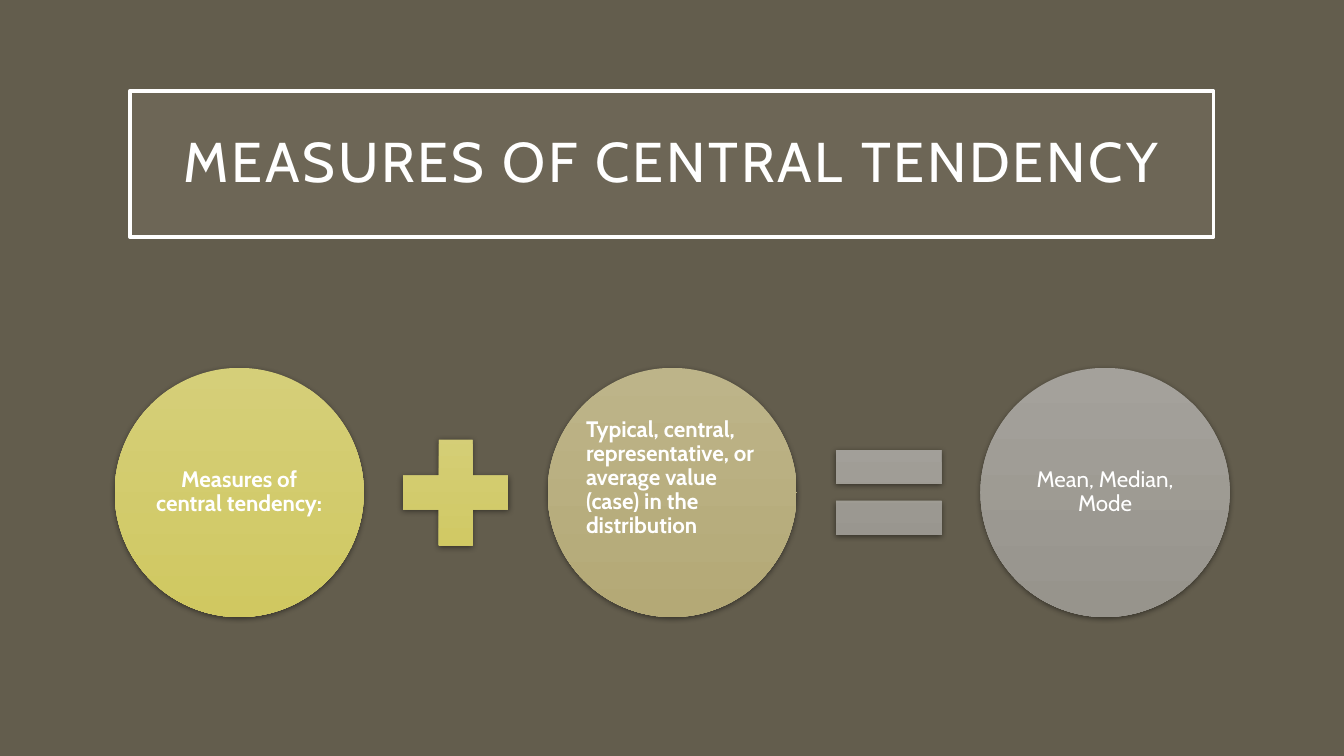
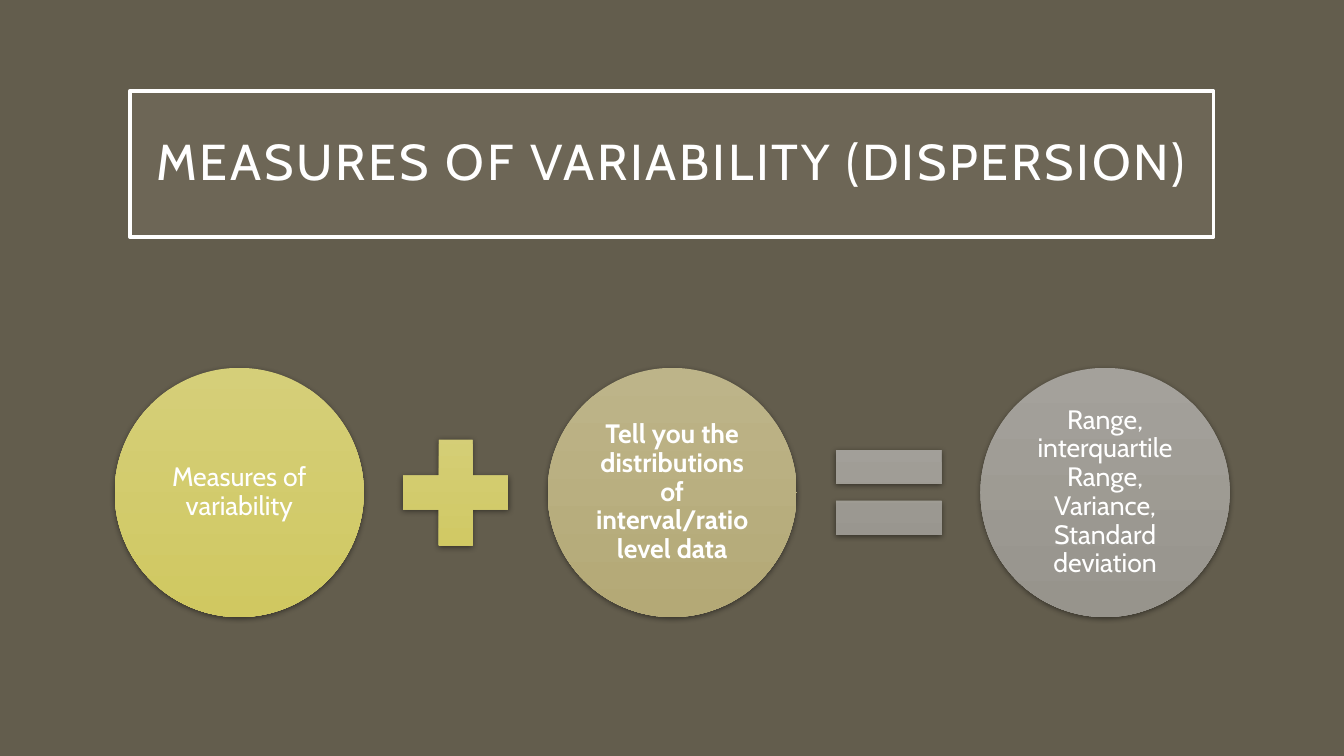
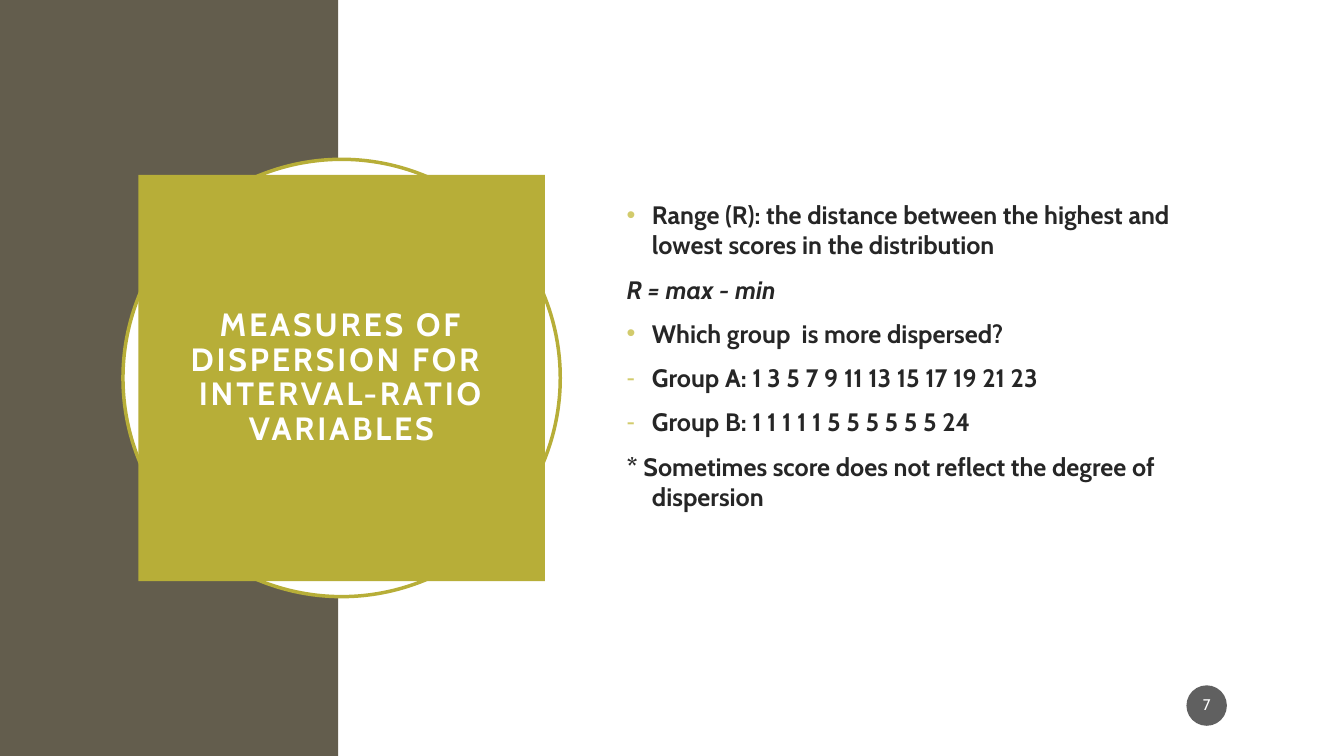
from dataclasses import dataclass

from lxml.etree import SubElement
from pptx import Presentation
from pptx.dml.color import RGBColor
from pptx.enum.shapes import MSO_SHAPE
from pptx.enum.text import MSO_ANCHOR, MSO_AUTO_SIZE, PP_ALIGN
from pptx.oxml.ns import qn
from pptx.presentation import Presentation as Deck
from pptx.shapes.autoshape import Shape
from pptx.slide import Slide
from pptx.text.text import TextFrame, _Paragraph
from pptx.util import Cm, Pt

FONT = "Cabin"
COLORS = {
    "earth": "635D4D",
    "sand": "A7A08E",
    "olive": "B7AE38",
    "bullet": "D2CB6C",
    "ink": "262626",
    "badge": "1D1D1D",
    "white": "FFFFFF",
    "black": "000000",
}
GRADIENTS = {
    "yellow": ("D5CF79", "D0C861"),
    "khaki": ("BDB489", "B4A976"),
    "gray": ("A4A19B", "97948C"),
}

SLIDE_W, SLIDE_H = 33.87, 19.05
TITLE_ONLY, TITLE_AND_BODY = 5, 1

# Equation row, in centimetres
CIRCLE, SIGN, GAP = 6.28, 3.63, 0.5
ROW_LEFT, ROW_MIDDLE = 2.89, 12.41
SIGNS = (MSO_SHAPE.MATH_PLUS, MSO_SHAPE.MATH_EQUAL)
SIGN_GRADIENTS = ("yellow", "gray")


@dataclass(frozen=True)
class Box:
    left: float
    top: float
    width: float
    height: float

    def lengths(self) -> tuple[Cm, Cm, Cm, Cm]:
        return Cm(self.left), Cm(self.top), Cm(self.width), Cm(self.height)


@dataclass(frozen=True)
class Term:
    text: str
    gradient: str
    bold: bool = False
    align: PP_ALIGN = PP_ALIGN.CENTER
    lift: float = 0.0


@dataclass(frozen=True)
class Equation:
    title: str
    title_size: int
    term_size: int
    inset: float
    terms: tuple[Term, Term, Term]


@dataclass(frozen=True)
class Point:
    text: str
    bullet: str = ""
    italic: bool = False


EQUATIONS = (
    Equation("MEASURES OF CENTRAL TENDENCY", 40, 16, 0.05, (
        Term("Measures of central tendency:", "yellow", bold=True),
        Term("Typical, central, representative, or average value (case) in the distribution",
             "khaki", bold=True, align=PP_ALIGN.LEFT, lift=0.36),
        Term("Mean, Median, Mode", "gray"),
    )),
    Equation("MEASURES OF VARIABILITY (DISPERSION)", 36, 19, 0.08, (
        Term("Measures of variability", "yellow"),
        Term("Tell you the distributions of interval/ratio level data", "khaki", bold=True),
        Term("Range, interquartile Range, Variance, Standard deviation", "gray"),
    )),
)
DISPERSION_TITLE = "MEASURES OF DISPERSION FOR \vINTERVAL-RATIO VARIABLES"
DISPERSION_POINTS = (
    Point("Range (R): the distance between the highest and lowest scores in the distribution", "•"),
    Point("R = max - min", italic=True),
    Point("Which group  is more dispersed?", "•"),
    Point("Group A: 1 3 5 7 9 11 13 15 17 19 21 23", "-"),
    Point("Group B: 1 1 1 1 1 5 5 5 5 5 5 24", "-"),
    Point("* Sometimes score does not reflect the degree of dispersion"),
)


def rgb(name: str) -> RGBColor:
    return RGBColor.from_string(COLORS[name])


def fill_solid(shape: Shape, color: str, opacity: int = 100) -> None:
    shape.fill.solid()
    shape.fill.fore_color.rgb = rgb(color)
    if opacity < 100:
        fill_color = shape._element.spPr.find(qn("a:solidFill")).find(qn("a:srgbClr"))
        SubElement(fill_color, qn("a:alpha"), val=str(opacity * 1000))


def fill_gradient(shape: Shape, gradient: str) -> None:
    shape.fill.gradient()
    shape.fill.gradient_angle = 270
    for stop, color in zip(shape.fill.gradient_stops, GRADIENTS[gradient]):
        stop.color.rgb = RGBColor.from_string(color)


def outline(shape: Shape, color: str) -> None:
    shape.line.color.rgb = rgb(color)
    shape.line.width = Pt(2.5)


def add_soft_shadow(shape: Shape) -> None:
    effects = shape._element.spPr.find(qn("a:effectLst"))
    shadow = SubElement(effects, qn("a:outerShdw"), blurRad=str(Pt(4.4)), dist=str(Pt(1.2)),
                        dir="5400000", algn="ctr", rotWithShape="0")
    color = SubElement(shadow, qn("a:srgbClr"), val=COLORS["black"])
    SubElement(color, qn("a:alpha"), val="45000")


def add_plain_shape(slide: Slide, kind: MSO_SHAPE, box: Box) -> Shape:
    """Add a preset shape without line or shadow."""
    shape = slide.shapes.add_shape(kind, *box.lengths())
    shape.shadow.inherit = False
    shape.line.fill.background()
    return shape


def set_frame(frame: TextFrame, inset_x: float, inset_y: float, lift: float = 0) -> None:
    """Centre the text vertically, raised by lift centimetres."""
    frame.word_wrap = True
    frame.auto_size = MSO_AUTO_SIZE.NONE
    frame.vertical_anchor = MSO_ANCHOR.MIDDLE
    frame.margin_left = frame.margin_right = Cm(inset_x)
    frame.margin_top = Cm(inset_y)
    frame.margin_bottom = Cm(inset_y + 2 * lift)


def set_font(paragraph: _Paragraph, size: int, color: str = "white", bold: bool = False) -> None:
    font = paragraph.font
    font.name, font.size, font.bold = FONT, Pt(size), bold
    font.color.rgb = rgb(color)


def write_line(frame: TextFrame, text: str, size: int, bold: bool = False,
               align: PP_ALIGN = PP_ALIGN.CENTER) -> _Paragraph:
    frame.text = text
    paragraph = frame.paragraphs[0]
    paragraph.alignment = align
    paragraph.line_spacing = 0.9
    set_font(paragraph, size, bold=bold)
    return paragraph


def place(shape: Shape, box: Box) -> None:
    shape.left, shape.top, shape.width, shape.height = box.lengths()


def set_title(slide: Slide, text: str, box: Box, size: int, bold: bool = False) -> Shape:
    """Fill the title placeholder and bring it to the front."""
    title = slide.shapes.title
    place(title, box)
    set_frame(title.text_frame, 0.51, 0.51)
    paragraph = write_line(title.text_frame, text, size, bold)
    paragraph.font._rPr.set("spc", "200")
    slide.shapes._spTree.append(title._element)
    return title


def add_slide(deck: Deck, layout: int, background: str) -> Slide:
    slide = deck.slides.add_slide(deck.slide_layouts[layout])
    slide.background.fill.solid()
    slide.background.fill.fore_color.rgb = rgb(background)
    return slide


def add_equation_slide(deck: Deck, equation: Equation) -> None:
    slide = add_slide(deck, TITLE_ONLY, "earth")
    title = set_title(slide, equation.title, Box(3.27, 2.29, 27.31, 3.68), equation.title_size)
    fill_solid(title, "sand", opacity=15)
    outline(title, "white")

    pitch = CIRCLE + SIGN + 2 * GAP
    for index, term in enumerate(equation.terms):
        left = ROW_LEFT + index * pitch
        circle = add_plain_shape(slide, MSO_SHAPE.OVAL,
                                 Box(left, ROW_MIDDLE - CIRCLE / 2, CIRCLE, CIRCLE))
        fill_gradient(circle, term.gradient)
        add_soft_shadow(circle)
        set_frame(circle.text_frame, equation.inset, equation.inset, term.lift)
        write_line(circle.text_frame, term.text, equation.term_size, term.bold, term.align)

    for index, (kind, gradient) in enumerate(zip(SIGNS, SIGN_GRADIENTS)):
        left = ROW_LEFT + index * pitch + CIRCLE + GAP
        sign = add_plain_shape(slide, kind, Box(left, ROW_MIDDLE - SIGN / 2, SIGN, SIGN))
        fill_gradient(sign, gradient)
        add_soft_shadow(sign)


def write_point(paragraph: _Paragraph, point: Point) -> None:
    paragraph.text = point.text
    paragraph.space_before = Pt(10)
    properties = paragraph._p.get_or_add_pPr()
    properties.set("marL", str(Cm(0.64)))
    properties.set("indent", str(-Cm(0.64)))
    if point.bullet:
        bullet_color = SubElement(properties, qn("a:buClr"))
        SubElement(bullet_color, qn("a:srgbClr"), val=COLORS["bullet"])
        SubElement(properties, qn("a:buChar"), char=point.bullet)
    else:
        SubElement(properties, qn("a:buNone"))
    set_font(paragraph, 18, "ink", bold=True)
    paragraph.font.italic = point.italic


def add_dispersion_slide(deck: Deck) -> None:
    slide = add_slide(deck, TITLE_AND_BODY, "white")
    side_band = add_plain_shape(slide, MSO_SHAPE.RECTANGLE, Box(0, 0, 8.52, SLIDE_H))
    fill_solid(side_band, "earth")

    def centred_square(size: float) -> Box:
        return Box(8.61 - size / 2, (SLIDE_H - size) / 2, size, size)

    ring = add_plain_shape(slide, MSO_SHAPE.OVAL, centred_square(11.02))
    fill_solid(ring, "white")
    outline(ring, "olive")
    title = set_title(slide, DISPERSION_TITLE, centred_square(10.24), 23, bold=True)
    fill_solid(title, "olive")

    body = slide.placeholders[1]
    place(body, Box(15.54, 3.89, 14.78, 10.13))
    set_frame(body.text_frame, 0.25, 0.13)
    for index, point in enumerate(DISPERSION_POINTS):
        frame = body.text_frame
        write_point(frame.add_paragraph() if index else frame.paragraphs[0], point)

    badge = add_plain_shape(slide, MSO_SHAPE.OVAL, Box(29.9, 17.27, 1.02, 1.02))
    fill_solid(badge, "badge", opacity=70)
    set_frame(badge.text_frame, 0.05, 0.13)
    write_line(badge.text_frame, "7", 11)


def main() -> None:
    deck = Presentation()
    deck.slide_width, deck.slide_height = Cm(SLIDE_W), Cm(SLIDE_H)
    for equation in EQUATIONS:
        add_equation_slide(deck, equation)
    add_dispersion_slide(deck)
    deck.save("out.pptx")


if __name__ == "__main__":
    main()
